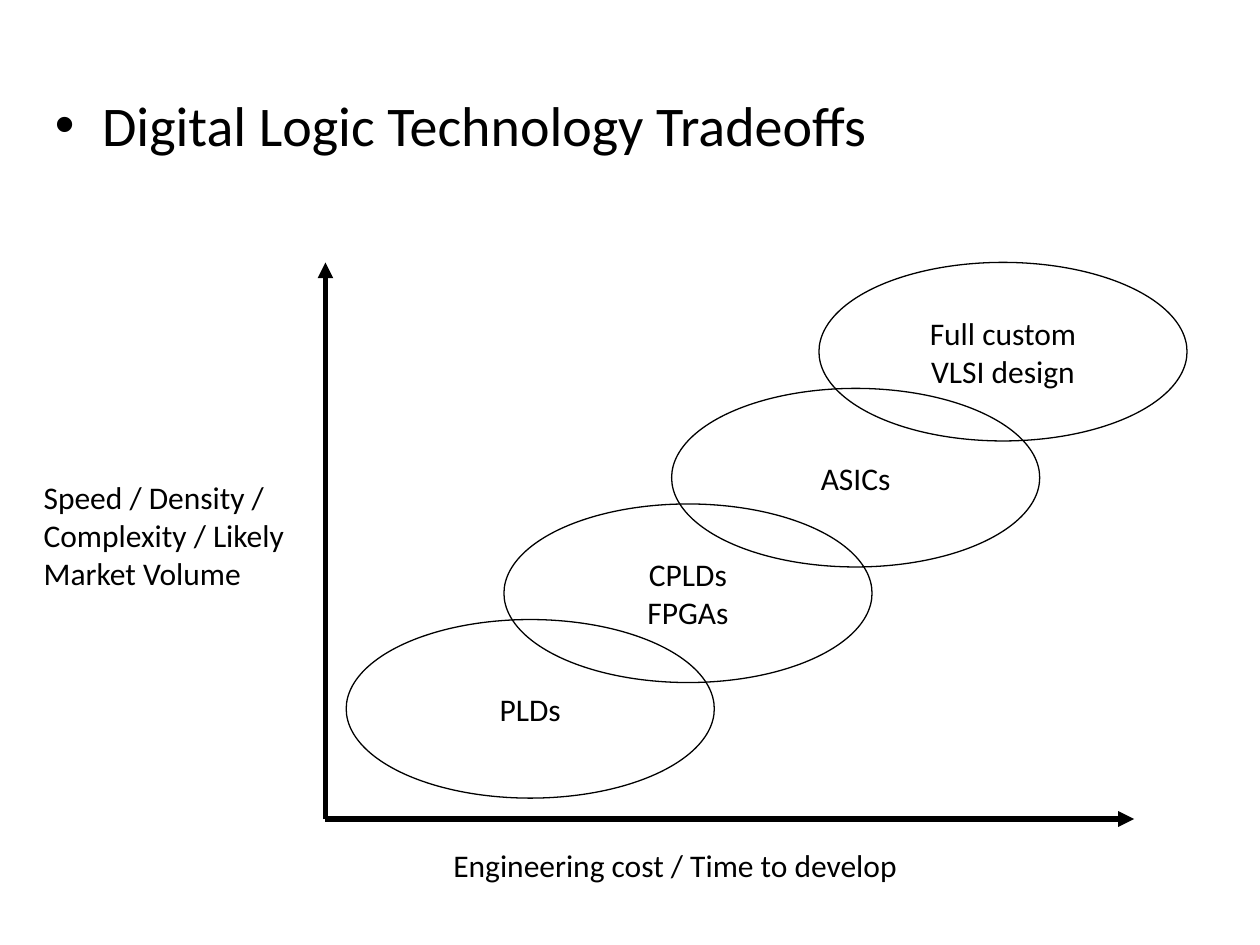
from lxml import etree
from pptx import Presentation
from pptx.dml.color import RGBColor
from pptx.enum.shapes import MSO_CONNECTOR, MSO_SHAPE
from pptx.enum.text import MSO_ANCHOR, PP_ALIGN
from pptx.oxml.ns import qn
from pptx.util import Cm, Pt

STRAIGHT = MSO_CONNECTOR.STRAIGHT
OVAL = MSO_SHAPE.OVAL
CENTER = PP_ALIGN.CENTER
LEFT = PP_ALIGN.LEFT
MIDDLE = MSO_ANCHOR.MIDDLE
TOP = MSO_ANCHOR.TOP

FONT = "Calibri"
INK = "000000"
HEADING_SIZE = 32
LABEL_SIZE = 18

# Technology and the offset of its oval from the top left of the chart area, in cm
TECHNOLOGIES = [
    ("PLDs", 0.42, 7.2),
    ("CPLDs\nFPGAs", 3.6, 4.87),
    ("ASICs", 6.98, 2.54),
    ("Full custom\nVLSI design", 9.95, 0),
]
OVAL_WIDTH, OVAL_HEIGHT = 7.42, 3.6


def color(hex_string):
    return RGBColor.from_string(hex_string)


def set_format(target, values):
    for name, value in values.items():
        setattr(target, name, value)


def write(frame, text, size, frame_format=None, align=None):
    set_format(frame, frame_format or {})
    paragraph = frame.paragraphs[0]
    paragraph.text = text
    if align is not None:
        paragraph.alignment = align
    set_format(paragraph.font, {"name": FONT, "size": Pt(size)})
    paragraph.font.color.rgb = color(INK)


def add_heading(slide, left, top, width, height):
    slide.shapes._spTree.remove(slide.shapes.title._element)
    heading = slide.placeholders[1]
    set_format(heading, {"left": Cm(left), "top": Cm(top),
                         "width": Cm(width), "height": Cm(height)})
    write(heading.text_frame, "Digital Logic Technology Tradeoffs", HEADING_SIZE)


def add_axis(slide, start, end):
    axis = slide.shapes.add_connector(
        STRAIGHT, *(Cm(value) for value in start + end))
    axis.line.width = Pt(3)
    axis.line.color.rgb = color(INK)
    etree.SubElement(axis.line._get_or_add_ln(), qn("a:tailEnd"), type="triangle")
    etree.SubElement(axis._element.spPr, qn("a:effectLst"))


def add_axis_label(slide, text, left, top, width, height):
    label = slide.shapes.add_textbox(Cm(left), Cm(top), Cm(width), Cm(height))
    write(label.text_frame, text, LABEL_SIZE,
          {"word_wrap": True, "vertical_anchor": TOP}, LEFT)


def add_technology(slide, text, left, top):
    oval = slide.shapes.add_shape(
        OVAL, Cm(left), Cm(top), Cm(OVAL_WIDTH), Cm(OVAL_HEIGHT))
    oval.shadow.inherit = False
    oval.fill.background()
    oval.line.width = Pt(0.75)
    oval.line.color.rgb = color(INK)
    write(oval.text_frame, text, LABEL_SIZE,
          {"word_wrap": False, "vertical_anchor": MIDDLE}, CENTER)


def add_tradeoff_chart(slide, left, top, width, height):
    """Draw both axes with their labels and the overlapping technologies."""
    origin = (left, top + height)
    add_axis(slide, origin, (left + width, top + height))
    add_axis(slide, origin, (left, top))
    add_axis_label(slide, "Engineering cost / Time to develop",
                   left + 2.33, top + height + 0.42, 11.43, 1.02)
    add_axis_label(slide, "Speed / Density / Complexity / Likely\nMarket Volume",
                   left - 5.93, top + 4.23, 5.72, 2.54)
    for text, across, down in TECHNOLOGIES:
        add_technology(slide, text, left + across, top + down)


def main():
    presentation = Presentation()
    set_format(presentation, {"slide_width": Cm(25.4), "slide_height": Cm(19.05)})
    slide = presentation.slides.add_slide(presentation.slide_layouts[1])
    add_heading(slide, 0.85, 1.69, 22.86, 12.57)
    add_tradeoff_chart(slide, 6.56, 5.29, 16.3, 11.22)
    presentation.save("out.pptx")


if __name__ == "__main__":
    main()
